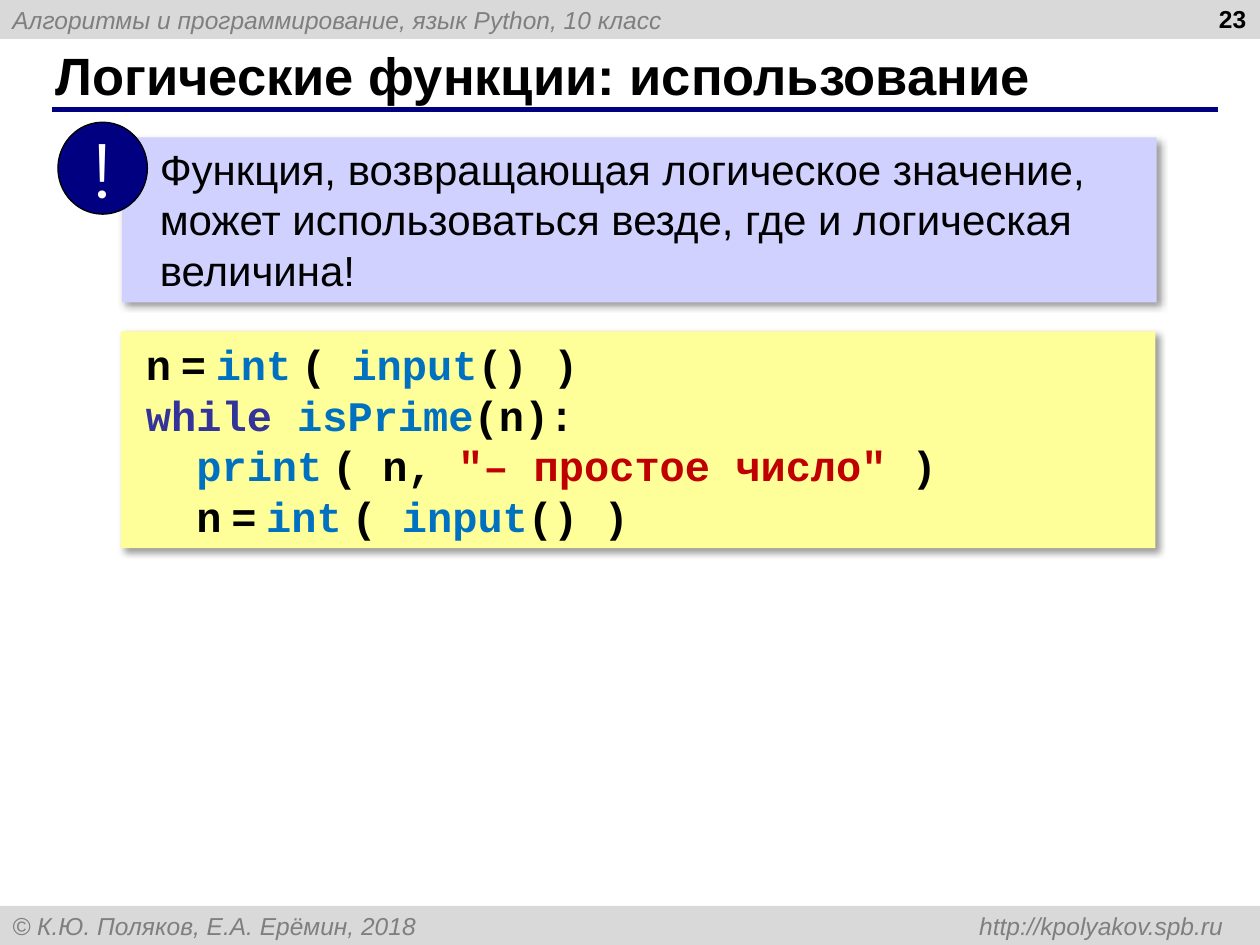
"""Build the slide on using logical functions in Python."""
from lxml import etree
from pptx import Presentation
from pptx.dml.color import RGBColor
from pptx.enum import shapes, text
from pptx.oxml import parse_xml
from pptx.oxml.ns import nsdecls, qn
from pptx.util import Inches, Pt

BLACK = RGBColor(0x00, 0x00, 0x00)
WHITE = RGBColor(0xFF, 0xFF, 0xFF)
BAND = RGBColor(0xD9, 0xD9, 0xD9)
GREY = RGBColor(0x7F, 0x7F, 0x7F)
NAVY = RGBColor(0x00, 0x00, 0x80)
LILAC = RGBColor(0xD1, 0xD1, 0xFF)
YELLOW = RGBColor(0xFF, 0xFF, 0x99)
BLUE = RGBColor(0x00, 0x70, 0xC0)
VIOLET = RGBColor(0x33, 0x33, 0x99)
RED = RGBColor(0xC0, 0x00, 0x00)
SHADOW = (
    f'<a:effectLst {nsdecls("a")}><a:outerShdw blurRad="50800" dist="38100" '
    'dir="2700000" algn="tl" rotWithShape="0"><a:srgbClr val="000000">'
    '<a:alpha val="40000"/></a:srgbClr></a:outerShdw></a:effectLst>'
)

prs = Presentation()
prs.slide_width, prs.slide_height = Inches(10), Inches(7.5)
s = prs.slides.add_slide(prs.slide_layouts[5])


def add_run(p, words, size, color, font="Arial", bold=False, italic=False):
    r = p.add_run()
    r.text = words
    r.font.name, r.font.size = font, Pt(size)
    r.font.bold, r.font.italic = bold, italic
    r.font.color.rgb = color


def add_box(kind, left, top, width, height, fill, shadow=False):
    sp = s.shapes.add_shape(kind, Inches(left), Inches(top), Inches(width), Inches(height))
    sp.shadow.inherit = False
    if shadow:
        sp._element.spPr.remove(sp._element.spPr.find(qn("a:effectLst")))
        sp._element.spPr.append(parse_xml(SHADOW))
    sp.fill.solid()
    sp.fill.fore_color.rgb = fill
    sp.line.fill.background()
    sp.text_frame.vertical_anchor = text.MSO_ANCHOR.MIDDLE
    sp.text_frame.paragraphs[0].alignment = text.PP_ALIGN.LEFT
    return sp


RECT = shapes.MSO_SHAPE.RECTANGLE
for top, words in (
    (0, "Алгоритмы и программирование, язык Python, 10 класс"),
    (7.19, "© К.Ю. Поляков, Е.А. Ерёмин, 2018 \thttp://kpolyakov.spb.ru"),
):
    p = add_box(RECT, 0, top, 10, 0.31, BAND).text_frame.paragraphs[0]
    add_run(p, words, 14, GREY, italic=True)
    if "\t" in words:
        tabs = etree.SubElement(p._p.get_or_add_pPr(), qn("a:tabLst"))
        etree.SubElement(tabs, qn("a:tab"), pos=str(Inches(9.61)), algn="r")

rule = s.shapes.add_connector(
    shapes.MSO_CONNECTOR.STRAIGHT, Inches(0.41), Inches(0.87), Inches(9.67), Inches(0.87)
)
rule.line.color.rgb = NAVY
rule.line.width = Pt(3)
etree.SubElement(rule._element.spPr, qn("a:effectLst"))

title = s.shapes.title
title.left, title.top = Inches(0.34), Inches(0.33)
title.width, title.height = Inches(9.16), Inches(0.52)
tf = title.text_frame
tf.auto_size = text.MSO_AUTO_SIZE.NONE
tf.vertical_anchor = text.MSO_ANCHOR.MIDDLE
tf.paragraphs[0].alignment = text.PP_ALIGN.LEFT
add_run(tf.paragraphs[0], "Логические функции: использование", 30, BLACK, bold=True)

number = s.shapes.add_textbox(Inches(7.66), Inches(-0.02), Inches(2.33), Inches(0.52))
tf = number.text_frame
tf.word_wrap = True
tf.paragraphs[0].alignment = text.PP_ALIGN.RIGHT
add_run(tf.paragraphs[0], "23", 14, BLACK, bold=True)

read_number = [("n", BLACK), (" ", None), ("=", BLACK), (" ", None), ("int", BLUE),
               (" ", None), ("( ", BLACK), ("input", BLUE), ("() )", BLACK)]
code = [
    (0, read_number),
    (0, [("while ", VIOLET), ("isPrime", BLUE), ("(n):", BLACK)]),
    (1, [("print", BLUE), (" ", None), ("( n, ", BLACK),
         ('"– простое число"', RED), (" )", BLACK)]),
    (1, read_number),
]
tf = add_box(RECT, 0.96, 2.63, 8.21, 1.72, YELLOW, shadow=True).text_frame
for i, (level, parts) in enumerate(code):
    p = tf.add_paragraph() if i else tf.paragraphs[0]
    p.alignment = text.PP_ALIGN.JUSTIFY
    pPr = p._p.get_or_add_pPr()
    pPr.set("marL", str(Inches(0.2)))
    pPr.set("indent", str(Inches(0.4 * level - 0.1)))
    for words, color in parts:
        if color is None:
            add_run(p, words, 20, BLACK, bold=True)
        else:
            add_run(p, words, 24, color, "Courier New", bold=True)

tf = add_box(RECT, 0.97, 1.09, 8.21, 1.31, LILAC, shadow=True).text_frame
tf.vertical_anchor = text.MSO_ANCHOR.TOP
p = tf.paragraphs[0]
p._p.get_or_add_pPr().set("marL", str(Inches(0.2)))
add_run(p, "Функция, возвращающая логическое значение, может использоваться "
           "везде, где и логическая величина!", 24, BLACK)

badge = add_box(shapes.MSO_SHAPE.OVAL, 0.46, 0.97, 0.71, 0.73, NAVY)
badge.line.color.rgb = BLACK
badge.line.width = Pt(0.75)
badge.text_frame.word_wrap = False
p = badge.text_frame.paragraphs[0]
p.alignment = text.PP_ALIGN.CENTER
add_run(p, "!", 44, WHITE, "Montserrat")

prs.save("out.pptx")
